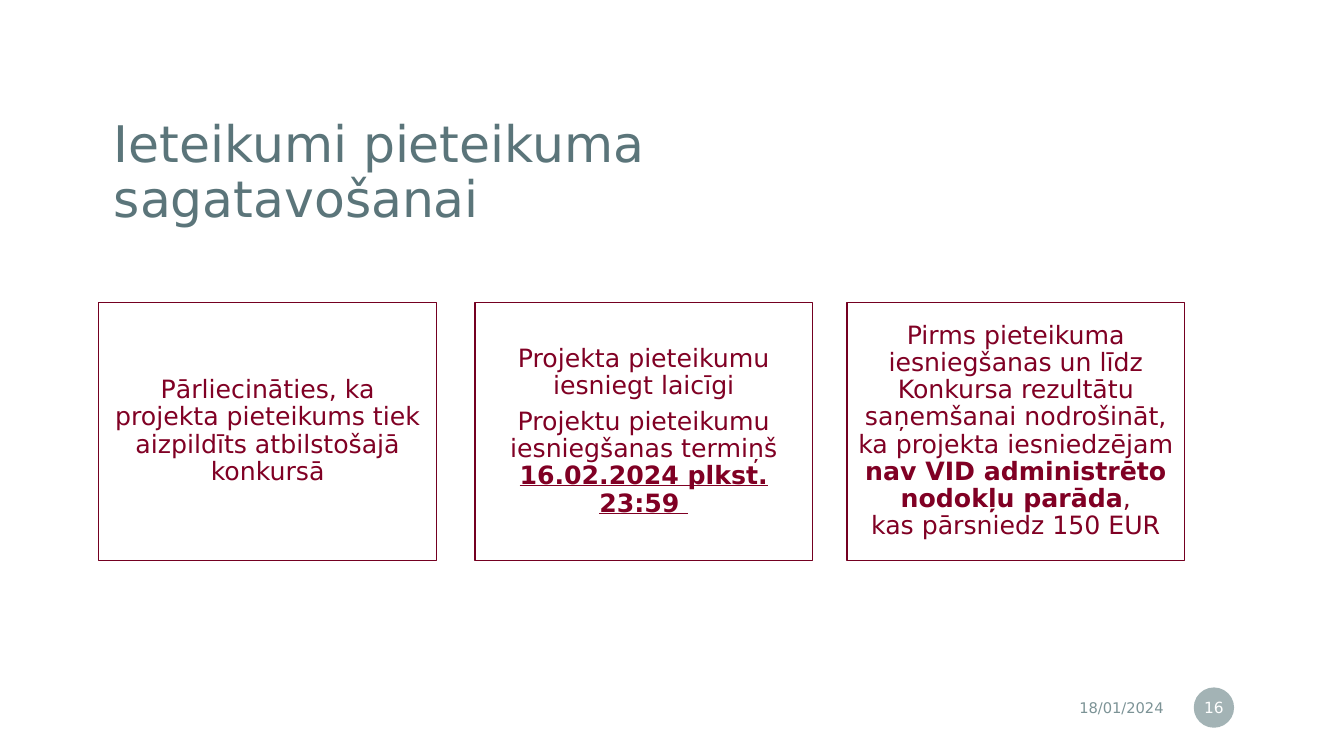
from lxml import etree
from pptx import Presentation
from pptx.dml.color import RGBColor
from pptx.enum import shapes, text
from pptx.oxml import ns
from pptx.util import Inches, Pt

FONT = "DejaVu Sans"
TEAL, GREY_TEAL, WINE, WINE_EDGE, WHITE = "5B757A", "7C9396", "800024", "740021", "FFFFFF"
STRONG = {"bold": True}
DEADLINE = {"bold": True, "underline": True}


def color(hex_string):
    return RGBColor.from_string(hex_string)


def write(frame, paragraphs, size, ink, align=text.PP_ALIGN.LEFT, spacing=1.0,
          gap=0, inset=(0.1, 0.05)):
    """Fill a frame with paragraphs, each a list of (words, font settings); "\\n" breaks a line."""
    frame.word_wrap = True
    frame.auto_size = text.MSO_AUTO_SIZE.NONE
    frame.vertical_anchor = text.MSO_ANCHOR.MIDDLE
    frame.margin_left = frame.margin_right = Inches(inset[0])
    frame.margin_top = frame.margin_bottom = Inches(inset[1])
    for index, runs in enumerate(paragraphs):
        paragraph = frame.add_paragraph() if index else frame.paragraphs[0]
        paragraph.alignment = align
        paragraph.line_spacing = spacing
        paragraph.space_before = Pt(gap if index else 0)
        for words, settings in runs:
            if words == "\n":
                paragraph.add_line_break()
                continue
            run = paragraph.add_run()
            run.text = words
            run.font.name, run.font.size = FONT, Pt(size)
            run.font.color.rgb = color(ink)
            for setting, value in settings.items():
                setattr(run.font, setting, value)


class Deck:
    def __init__(self):
        self.presentation = Presentation()
        self.presentation.slide_width = Inches(13.33)
        self.presentation.slide_height = Inches(7.5)
        self.slide = self.presentation.slides.add_slide(self.presentation.slide_layouts[5])

    def title(self, words, left, top, width, height):
        heading = self.slide.shapes.title
        heading.left, heading.top = Inches(left), Inches(top)
        heading.width, heading.height = Inches(width), Inches(height)
        write(heading.text_frame, [[(words, {})]], 36, TEAL, spacing=0.9, inset=(0.2, 0.2))

    def date(self, words, *place):
        label = self.slide.shapes.add_textbox(*map(Inches, place))
        write(label.text_frame, [[(words, {})]], 10.5, GREY_TEAL, text.PP_ALIGN.RIGHT)

    def block(self, kind, fill, *place):
        block = self.slide.shapes.add_shape(kind, *map(Inches, place))
        block.shadow.inherit = False
        block.fill.solid()
        block.fill.fore_color.rgb = color(fill)
        return block

    def page_badge(self, number, *place, opacity=70):
        badge = self.block(shapes.MSO_SHAPE.OVAL, GREY_TEAL, *place)
        badge.line.fill.background()
        tint = badge.fill._xPr.find(".//" + ns.qn("a:srgbClr"))
        etree.SubElement(tint, ns.qn("a:alpha"), val=str(opacity * 1000))
        write(badge.text_frame, [[(number, {})]], 11, WHITE, text.PP_ALIGN.CENTER,
              inset=(0.02, 0.05))

    def card(self, paragraphs, *place):
        card = self.block(shapes.MSO_SHAPE.RECTANGLE, WHITE, *place)
        card.line.color.rgb = color(WINE_EDGE)
        card.line.width = Pt(1)
        write(card.text_frame, paragraphs, 18, WINE, text.PP_ALIGN.CENTER,
              spacing=0.9, gap=6.3, inset=(0.07, 0.07))


RECOMMENDATIONS = [
    (0.98, [[("Pārliecināties, ka projekta pieteikums tiek aizpildīts atbilstošajā konkursā", {})]]),
    (4.71, [
        [("Projekta pieteikumu iesniegt laicīgi", {})],
        [("Projektu pieteikumu iesniegšanas termiņš ", {}),
         ("16.02.2024 plkst. 23:59 ", DEADLINE)],
    ]),
    (8.4, [[
        ("Pirms pieteikuma iesniegšanas un līdz Konkursa rezultātu saņemšanai nodrošināt, "
         "ka projekta iesniedzējam ", {}),
        ("nav VID administrēto nodokļu parāda", STRONG),
        (",", {}), ("\n", {}), ("kas pārsniedz 150 EUR", {}),
    ]]),
]


def main():
    deck = Deck()
    deck.title("Ieteikumi pieteikuma sagatavošanai", 0.93, 1.11, 8.73, 1.23)
    deck.date("18/01/2024", 8.63, 6.84, 3.01, 0.35)
    deck.page_badge("16", 11.84, 6.82, 0.4, 0.4)
    for left, paragraphs in RECOMMENDATIONS:
        deck.card(paragraphs, left, 3, 3.35, 2.56)
    deck.presentation.save("out.pptx")


if __name__ == "__main__":
    main()
